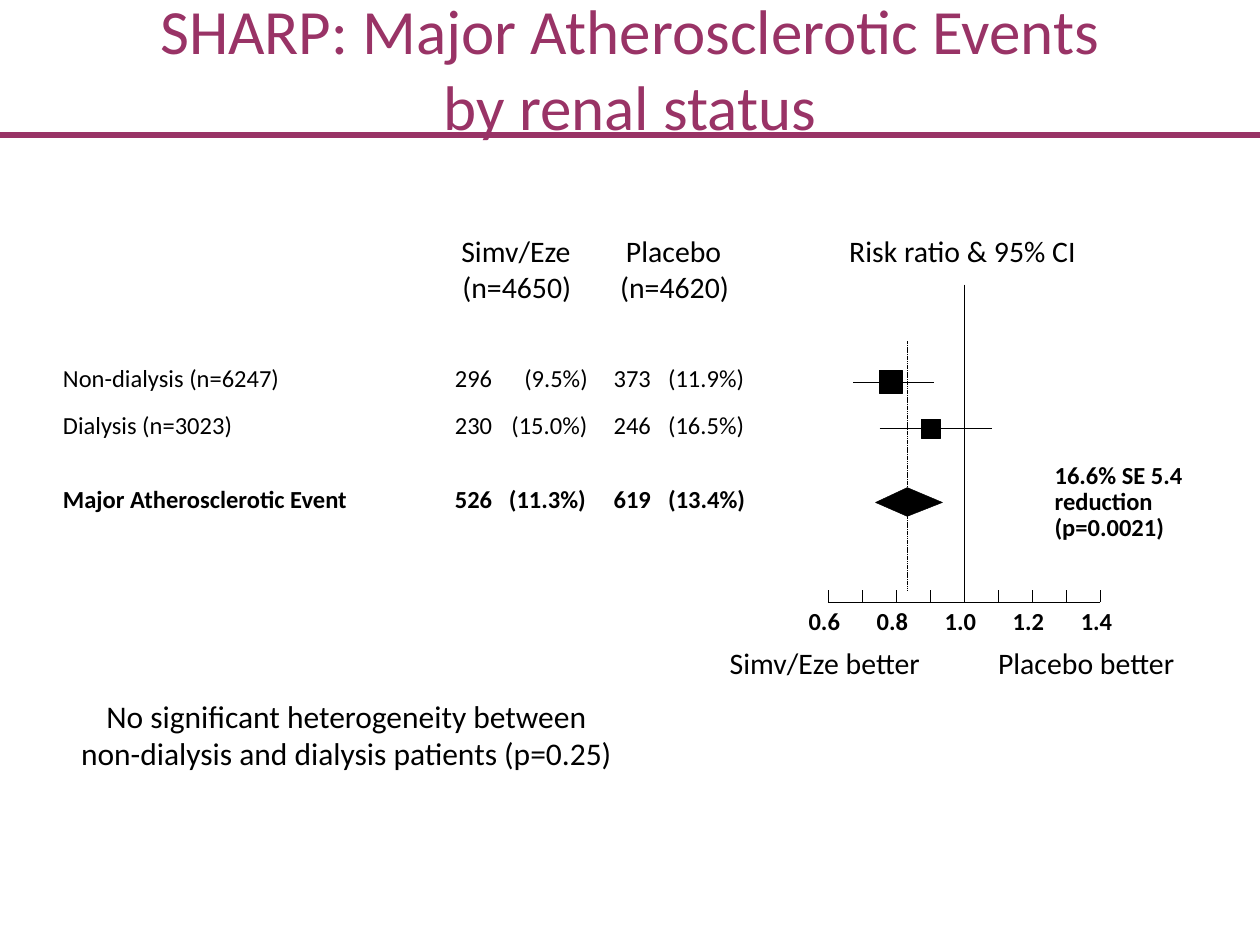
from pptx import Presentation
from pptx.util import Cm, Pt
from pptx.dml.color import RGBColor
from pptx.enum.dml import MSO_LINE_DASH_STYLE as DASH
from pptx.enum.shapes import MSO_CONNECTOR as CONN, MSO_SHAPE as SHAPE
from pptx.enum.text import MSO_ANCHOR as ANCHOR, MSO_AUTO_SIZE as FIT, PP_ALIGN as ALIGN
from pptx.oxml.ns import qn
from lxml import etree

PLUM = RGBColor(0x99, 0x33, 0x66)
BLACK = RGBColor(0, 0, 0)
NO_INSETS = dict(margin_left=0, margin_right=0, margin_top=0, margin_bottom=0)

prs = Presentation()
prs.slide_width, prs.slide_height = Cm(25.4), Cm(19.05)
s = prs.slides.add_slide(prs.slide_layouts[5])


def add_text(text, x, y, w, size, bold=False, h=0.79, align=ALIGN.LEFT, **frame):
    tf = s.shapes.add_textbox(Cm(x), Cm(y), Cm(w), Cm(h)).text_frame
    for key, value in (frame or dict(NO_INSETS, word_wrap=False)).items():
        setattr(tf, key, value)
    tf.auto_size = FIT.SHAPE_TO_FIT_TEXT
    p = tf.paragraphs[0]
    p.alignment = align
    r = p.add_run()
    r.text = text
    for key, value in dict(name="Calibri", size=Pt(size), bold=bold).items():
        setattr(r.font, key, value)
    r.font.color.rgb = BLACK


def add_line(x1, y1, x2, y2, color=BLACK, width=0.25):
    line = s.shapes.add_connector(CONN.STRAIGHT, Cm(x1), Cm(y1), Cm(x2), Cm(y2))
    line.line.color.rgb = color
    line.line.width = Pt(width)
    etree.SubElement(line._element.spPr, qn("a:effectLst"))
    return line


add_line(0, 2.72, 25.4, 2.72, PLUM, 3)

title = s.shapes.title
for key, value in dict(left=0, top=0, width=Cm(25.4), height=Cm(2.72)).items():
    setattr(title, key, value)
tf = title.text_frame
tf.text = "SHARP: Major Atherosclerotic Events\vby renal status"
tf.auto_size = FIT.NONE
tf.vertical_anchor = ANCHOR.MIDDLE
p = tf.paragraphs[0]
p.alignment = ALIGN.CENTER
for key, value in dict(name="Calibri", size=Pt(36)).items():
    setattr(p.font, key, value)
p.font.color.rgb = PLUM

for text, x, y, w in [
    ("Simv/Eze", 9.3, 4.7, 2.21),
    ("(n=4650)", 9.32, 5.41, 2.46),
    ("Placebo", 12.62, 4.7, 2.18),
    ("(n=4620)", 12.5, 5.41, 2.46),
    ("Risk ratio & 95% CI", 17.12, 4.7, 4.83),
    ("Simv/Eze better", 14.71, 13, 4.01),
    ("Placebo better", 20.12, 13, 3.99),
]:
    add_text(text, x, y, w, 17)

for y, bold, label, n1, pct1, pct1_x, n2, pct2 in [
    (7.32, False, "Non-dialysis (n=6247)", "296", "(9.5%)", 10.57, "373", "(11.9%)"),
    (8.26, False, "Dialysis (n=3023)", "230", "(15.0%)", 10.31, "246", "(16.5%)"),
    (9.75, True, "Major Atherosclerotic Event", "526", "(11.3%)", 10.26, "619", "(13.4%)"),
]:
    for text, x, w in [(label, 1.27, 5.89), (n1, 9.17, 1.19), (pct1, pct1_x, 2.06),
                       (n2, 12.37, 1.19), (pct2, 13.47, 2.06)]:
        add_text(text, x, y, w, 14, bold)

for i, text in enumerate(["16.6% SE 5.4", "reduction", "(p=0.0021)"]):
    add_text(text, 21.26, 9.27 + 0.53 * i, 3.15, 14, True)

markers = []
for x, y, size, low, high, mid in [(17.73, 7.47, 0.46, 17.2, 18.82, 7.7),
                                   (18.57, 8.46, 0.38, 17.73, 19.99, 8.64)]:
    markers.append(s.shapes.add_shape(SHAPE.RECTANGLE, Cm(x), Cm(y), Cm(size), Cm(size)))
    add_line(low, mid, high, mid)

fb = s.shapes.build_freeform(Cm(18.29), Cm(9.83))
fb.add_line_segments([(Cm(x), Cm(y)) for x, y in [(19, 10.13), (18.29, 10.41), (17.65, 10.13)]])
markers.append(fb.convert_to_shape())
for sp in markers:
    sp.shadow.inherit = False
    sp.fill.solid()
    sp.fill.fore_color.rgb = BLACK
    sp.line.color.rgb = BLACK
    sp.line.width = Pt(0.25)

axis_x, axis_y, step = 16.69, 12.14, 0.686
add_line(axis_x, axis_y, axis_x + 8 * step, axis_y)
for i in range(9):
    x = axis_x + i * step
    add_line(x, axis_y, x, axis_y - 0.25)
    if i % 2 == 0:
        add_text(f"{0.6 + i / 10:.1f}", x - 0.39, 12.22, 1.07, 14, True)

add_line(19.44, 5.74, 19.44, 11.91)
add_line(18.29, 6.88, 18.29, 11.91).line.dash_style = DASH.SQUARE_DOT

add_text("No significant heterogeneity between non-dialysis and dialysis patients (p=0.25)",
         1.27, 13.92, 11.43, 18, h=1.8, align=ALIGN.CENTER, word_wrap=True)

prs.save("out.pptx")
